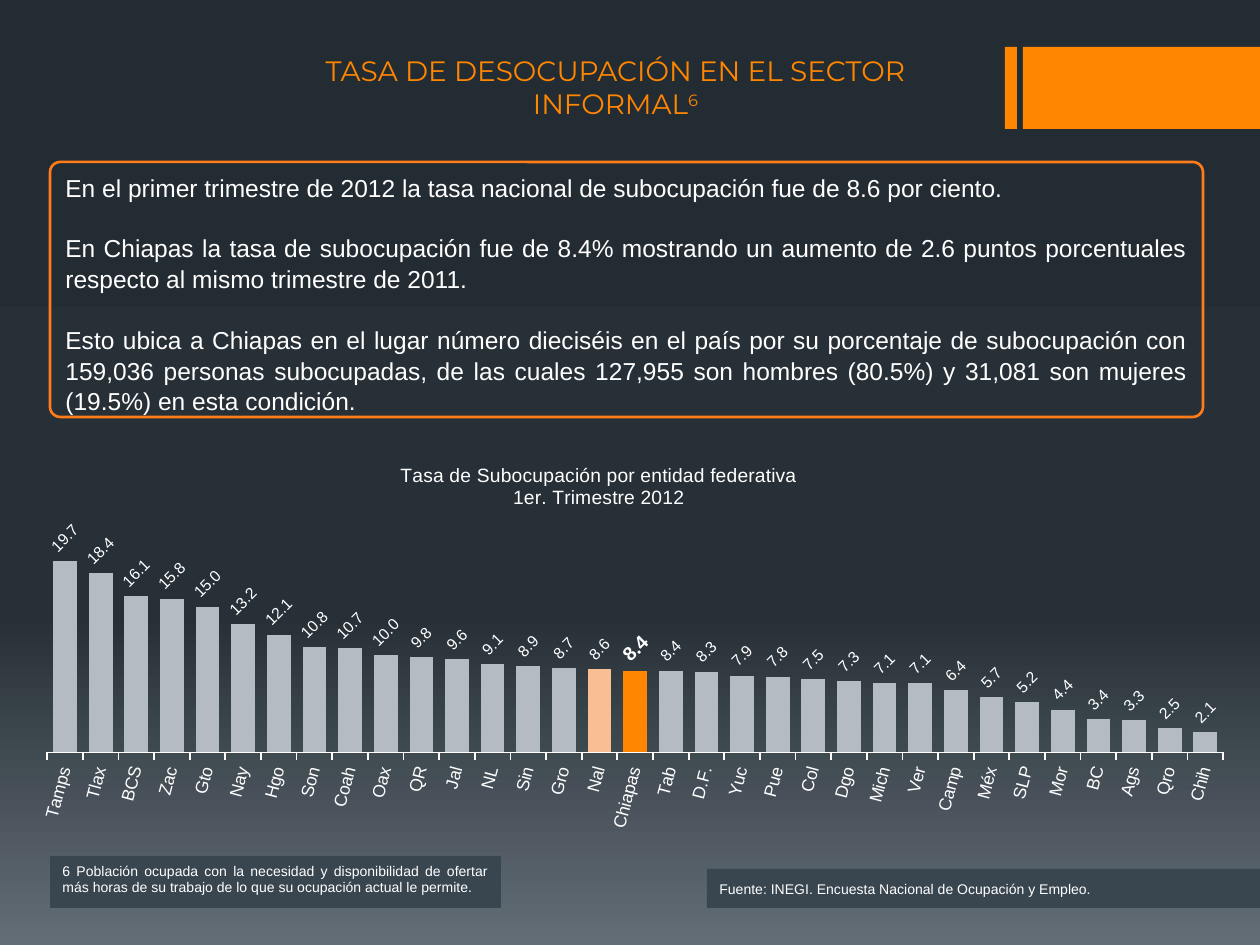
import copy
from dataclasses import dataclass

import pptx
import pptx.chart.data
import pptx.dml.color
import pptx.enum.chart
import pptx.enum.shapes
import pptx.enum.text
import pptx.oxml
import pptx.oxml.ns
import pptx.util

PX = 914400 // 126
ALIGN = pptx.enum.text.PP_ALIGN
ANCHOR = pptx.enum.text.MSO_ANCHOR
SHAPE = pptx.enum.shapes.MSO_SHAPE


@dataclass(frozen=True)
class Theme:
    accent: str = "FF8600"
    outline: str = "FF7C19"
    national: str = "F9BE92"
    bar: str = "B5BBC3"
    panel: str = "394650"
    text: str = "FFFFFF"
    backdrop: tuple = ((0, "242C33"), (0.65, "273037"), (1, "636D76"))
    heading_font: str = "Montserrat"
    body_font: str = "Arial"
    heading: int = 16
    body: int = 14
    chart_title: int = 11
    axis: int = 10
    label: int = 9
    note: int = 8


def rgb(value):
    return pptx.dml.color.RGBColor.from_string(value)


def set_font(font, size, color, name, bold=False):
    font.size, font.name, font.bold = pptx.util.Pt(size), name, bold
    font.color.rgb = rgb(color)


def write(tf, paragraphs, *, size, color, name, align=ALIGN.JUSTIFY, gap=0, spacing=None):
    """Fill a text frame with one paragraph per string."""
    for i, text in enumerate(paragraphs):
        p = tf.add_paragraph() if i else tf.paragraphs[0]
        p.alignment = align
        if spacing:
            p.line_spacing = spacing
        if i and gap:
            p.space_before = pptx.util.Pt(gap)
        r = p.add_run()
        r.text = text
        set_font(r.font, size, color, name)


class Deck:
    def __init__(self, theme):
        self.t = theme
        self.prs = pptx.Presentation()
        self.prs.slide_width = pptx.util.Inches(10)
        self.prs.slide_height = pptx.util.Inches(7.5)
        self.s = self.prs.slides.add_slide(self.prs.slide_layouts[6])

    def background(self):
        fill = self.s.background.fill
        fill.gradient()
        fill.gradient_angle = 270
        stops = self.s.background._cSld.xpath(".//a:gsLst")[0]
        stops.append(copy.deepcopy(stops[-1]))
        for stop, (position, color) in zip(fill.gradient_stops, self.t.backdrop):
            stop.position = position
            stop.color.rgb = rgb(color)

    def box(self, *at, kind=SHAPE.RECTANGLE, fill=None, line=None):
        sp = self.s.shapes.add_shape(kind, *(v * PX for v in at))
        sp.shadow.inherit = False
        if fill:
            sp.fill.solid()
            sp.fill.fore_color.rgb = rgb(fill)
        else:
            sp.fill.background()
        if line:
            sp.line.color.rgb = rgb(line)
            sp.line.width = pptx.util.Pt(1.5)
        else:
            sp.line.fill.background()
        return sp

    def panel(self, *at, paragraphs, size, anchor=ANCHOR.TOP, gap=0, spacing=None, **look):
        tf = self.box(*at, **look).text_frame
        tf.word_wrap = True
        tf.vertical_anchor = anchor
        write(tf, paragraphs, size=size, color=self.t.text, name=self.t.body_font,
              gap=gap, spacing=spacing)

    def heading(self, *at, text, mark):
        tf = self.s.shapes.add_textbox(*(v * PX for v in at)).text_frame
        tf.word_wrap = True
        style = (self.t.heading, self.t.accent, self.t.heading_font)
        write(tf, [text], size=style[0], color=style[1], name=style[2], align=ALIGN.CENTER)
        r = tf.paragraphs[0].add_run()
        r.text = mark
        set_font(r.font, *style)
        r.font._element.set("baseline", "30000")

    def columns(self, *at, title, rates, colors, bold_label):
        t, xl = self.t, pptx.enum.chart
        data = pptx.chart.data.CategoryChartData(number_format="0.0")
        data.categories = [name for name, _ in rates]
        data.add_series("Tasa de subocupación", [rate for _, rate in rates])
        chart = self.s.shapes.add_chart(xl.XL_CHART_TYPE.COLUMN_CLUSTERED,
                                        *(v * PX for v in at), data).chart
        set_font(chart.font, t.axis, t.text, t.body_font)
        chart.has_legend = False
        write(chart.chart_title.text_frame, title, size=t.chart_title, color=t.text,
              name=t.body_font, align=ALIGN.CENTER)
        # Axes
        chart.value_axis.minimum_scale, chart.value_axis.maximum_scale = 0, 25
        chart.value_axis.has_major_gridlines = False
        chart.value_axis.visible = False
        axis = chart.category_axis
        axis.major_tick_mark = xl.XL_TICK_MARK.OUTSIDE
        axis.format.line.color.rgb = rgb(t.text)
        axis.format.line.width = pptx.util.Pt(1)
        set_font(axis.tick_labels.font, t.axis, t.text, t.body_font)
        # Bars
        plot = chart.plots[0]
        plot.gap_width, plot.vary_by_categories = 50, False
        series = plot.series[0]
        names = [name for name, _ in rates]
        for target, color in [(series, t.bar)] + [
                (series.points[names.index(n)], c) for n, c in colors.items()]:
            target.format.fill.solid()
            target.format.fill.fore_color.rgb = rgb(color)
        # Value labels
        labels = series.data_labels
        labels.show_value = True
        labels.number_format, labels.number_format_is_linked = "0.0", False
        labels.position = xl.XL_LABEL_POSITION.OUTSIDE_END
        set_font(labels.font, t.label, t.text, t.body_font)
        strong = series.points[names.index(bold_label)].data_label
        set_font(strong.font, t.chart_title, t.text, t.body_font, bold=True)
        strong.position = xl.XL_LABEL_POSITION.OUTSIDE_END
        # Text rotation and fixed layout
        root = chart._chartSpace
        for where, degrees in (("c:dLbls", -45), ("c:catAx", -75)):
            for body in root.xpath(f".//{where}//a:bodyPr"):
                body.set("rot", str(degrees * 60000))
                body.set("vert", "horz")
        self.place(root.xpath(".//c:title")[0], x=0.3, y=0.06)
        self.place(root.xpath(".//c:plotArea")[0], inner=True, x=0.004, y=0.183, w=0.996, h=0.575)

    @staticmethod
    def place(parent, inner=False, **parts):
        """Give a chart part a manual layout, as fractions of the chart."""
        rows = '<c:layoutTarget val="inner"/>' if inner else ""
        rows += "".join(f'<c:{k}Mode val="edge"/>' for k in "xy")
        rows += "".join(f'<c:{k} val="{v}"/>' for k, v in parts.items())
        layout = pptx.oxml.parse_xml(
            f'<c:layout {pptx.oxml.ns.nsdecls("c")}><c:manualLayout>{rows}'
            '</c:manualLayout></c:layout>')
        for old in parent.xpath("./c:layout"):
            parent.remove(old)
        text = parent.xpath("./c:tx")
        parent.insert(1 if text else 0, layout)


RATES = list(zip(
    "Tamps Tlax BCS Zac Gto Nay Hgo Son Coah Oax QR Jal NL Sin Gro Nal Chiapas Tab D.F. Yuc "
    "Pue Col Dgo Mich Ver Camp Méx SLP Mor BC Ags Qro Chih".split(),
    [19.7, 18.4, 16.1, 15.8, 15, 13.2, 12.1, 10.8, 10.7, 10, 9.8, 9.6, 9.1, 8.9, 8.7, 8.6, 8.4,
     8.4, 8.3, 7.9, 7.8, 7.5, 7.3, 7.1, 7.1, 6.4, 5.7, 5.2, 4.4, 3.4, 3.3, 2.5, 2.1]))

FINDINGS = [
    "En el primer trimestre de 2012 la tasa nacional de subocupación fue de 8.6 por ciento.",
    "En Chiapas la tasa de subocupación fue de 8.4% mostrando un aumento de 2.6 puntos "
    "porcentuales respecto al mismo trimestre de 2011.",
    "Esto ubica a Chiapas en el lugar número dieciséis en el país por su porcentaje de "
    "subocupación con 159,036 personas subocupadas, de las cuales 127,955 son hombres (80.5%) "
    "y 31,081 son mujeres (19.5%) en esta condición.",
]


def main():
    theme = Theme()
    deck = Deck(theme)
    deck.background()
    # Corner bars
    deck.box(1005, 47, 12, 82, fill=theme.accent)
    deck.box(1023, 47, 237, 82, fill=theme.accent)
    # Findings
    frame = deck.panel
    frame(50, 162, 1153, 255, paragraphs=FINDINGS, size=theme.body, gap=17, spacing=1.05,
          kind=SHAPE.ROUNDED_RECTANGLE, line=theme.outline)
    deck.s.shapes[-1].adjustments[0] = 0.04
    # Rates by state
    deck.columns(42, 432, 1182, 423, rates=RATES, bold_label="Chiapas",
                 title=["Tasa de Subocupación por entidad federativa", "1er. Trimestre 2012"],
                 colors={"Nal": theme.national, "Chiapas": theme.accent})
    # Heading
    deck.heading(232, 47, 767, 81, text="TASA DE DESOCUPACIÓN EN EL SECTOR INFORMAL", mark="6")
    # Source and footnote
    frame(707, 869, 553, 39, size=theme.note, anchor=ANCHOR.MIDDLE, fill=theme.panel,
          paragraphs=["Fuente: INEGI. Encuesta Nacional de Ocupación y Empleo."])
    frame(50, 856, 451, 52, size=theme.note, fill=theme.panel,
          paragraphs=["6 Población ocupada con la necesidad y disponibilidad de ofertar más horas "
                      "de su trabajo de lo que su ocupación actual le permite."])
    deck.prs.save("out.pptx")


if __name__ == "__main__":
    main()
